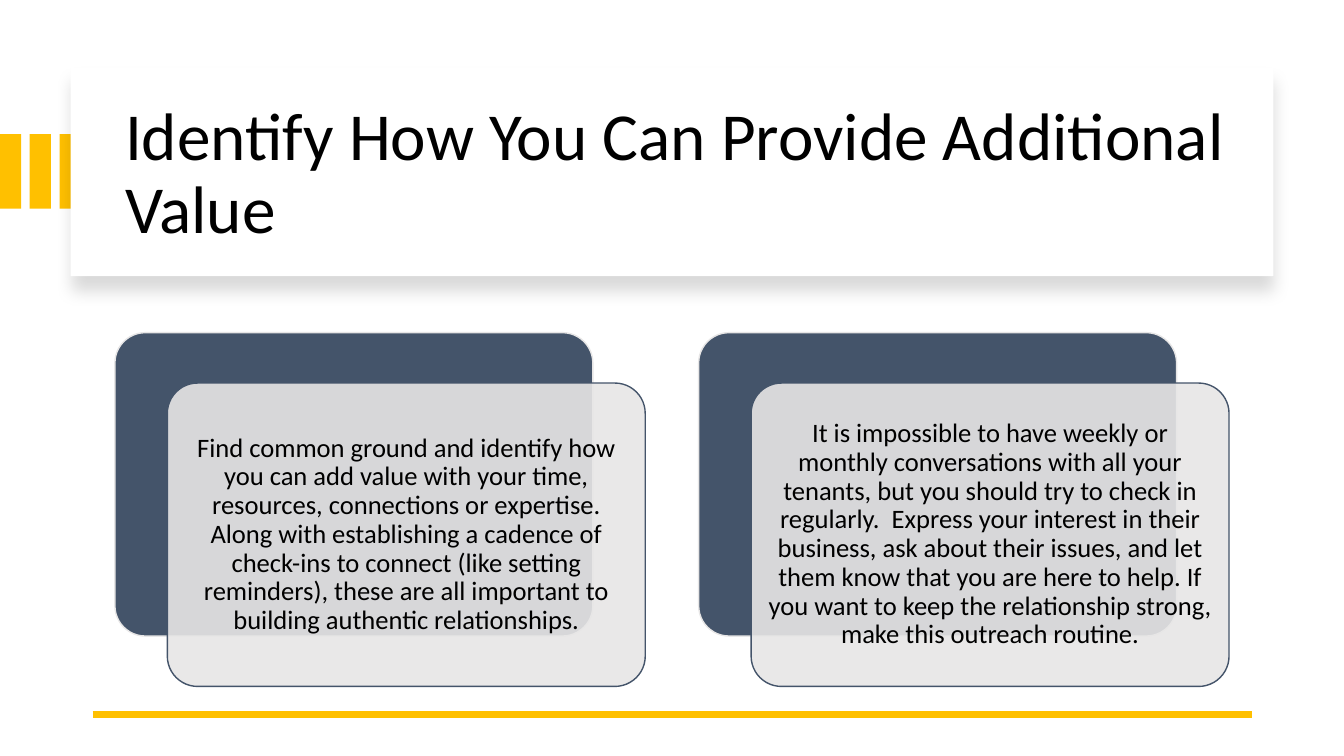
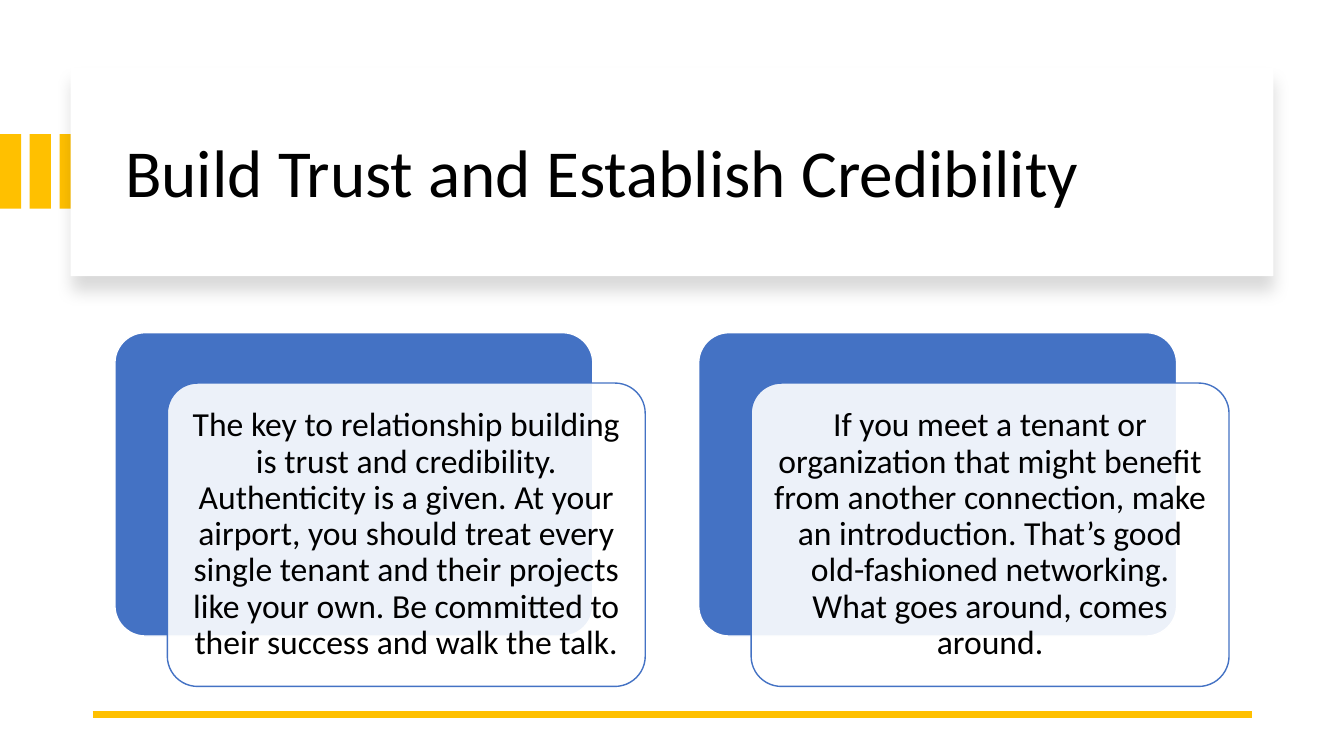
"""Build two slides on tenant relationships, each with a title banner and two layered cards."""
from dataclasses import dataclass

from lxml.etree import SubElement
from pptx import Presentation
from pptx.dml.color import RGBColor
from pptx.enum.shapes import MSO_CONNECTOR as Connector, MSO_SHAPE as Shape
from pptx.enum.text import MSO_ANCHOR as Anchor, MSO_AUTO_SIZE as AutoSize, PP_ALIGN as Align
from pptx.oxml.ns import qn
from pptx.util import Inches, Pt

GOLD, WHITE, BLACK = "FFC000", "FFFFFF", "000000"
FONT = "Calibri"
TITLE_ONLY = 5
STRIPE_PITCH = 0.59 / 2
CARD_LEFT, CARD_TOP, CARD_PITCH = 1.14, 3.3, 5.79
CARD_W, CARD_H = 4.74, 3.01
FRONT_DX, FRONT_DY = 0.52, 0.5


@dataclass(frozen=True)
class Box:
    """A rectangle in inches."""
    left: float
    top: float
    width: float
    height: float

    def emu(self) -> list:
        """Return the rectangle as lengths."""
        return [Inches(v) for v in (self.left, self.top, self.width, self.height)]


@dataclass(frozen=True)
class Page:
    """The content and card style of one slide."""
    title: str
    cards: tuple
    dark: str
    light: str
    size: int
    inset: float


TITLE_BOX = Box(1.14, 0.89, 11.13, 1.7)
BANNER_BOX = Box(0.7, 0.67, 11.93, 2.07)

PAGES = (
    Page(
        "Identify How You Can Provide Additional Value",
        (
            "Find common ground and identify how you can add value with your time, "
            "resources, connections or expertise. Along with establishing a cadence of "
            "check-ins to connect (like setting reminders), these are all important to "
            "building authentic relationships.",
            "It is impossible to have weekly or monthly conversations with all your "
            "tenants, but you should try to check in regularly.  Express your interest in "
            "their business, ask about their issues, and let them know that you are here "
            "to help. If you want to keep the relationship strong, make this outreach "
            "routine.",
        ),
        dark="44546A", light="E7E6E6", size=19, inset=0.08,
    ),
    Page(
        "Build Trust and Establish Credibility",
        (
            "The key to relationship building is trust and credibility. Authenticity is a "
            "given. At your airport, you should treat every single tenant and their "
            "projects like your own. Be committed to their success and walk the talk.",
            "If you meet a tenant or organization that might benefit from another "
            "connection, make an introduction. That’s good old-fashioned networking. "
            "What goes around, comes around.",
        ),
        dark="4472C4", light=WHITE, size=24, inset=0.1,
    ),
)


def rgb(color: str) -> RGBColor:
    """Turn a hex string into a colour."""
    return RGBColor.from_string(color)


def apply(target, values: dict) -> None:
    """Set each named attribute on the target."""
    for name, value in values.items():
        setattr(target, name, value)


def add_box(s, kind, box: Box, fill: str, line: str | None = None):
    """Add a flat filled shape with an optional 1 pt outline."""
    sp = s.shapes.add_shape(kind, *box.emu())
    sp.shadow.inherit = False
    sp.fill.solid()
    sp.fill.fore_color.rgb = rgb(fill)
    if line:
        sp.line.color.rgb = rgb(line)
        sp.line.width = Pt(1)
    else:
        sp.line.fill.background()
    return sp


def set_alpha(color_element, percent: int) -> None:
    """Give a colour element an opacity."""
    SubElement(color_element, qn("a:alpha"), val=str(percent * 1000))


def add_shadow(sp) -> None:
    """Cast a soft shadow straight down."""
    effects = sp.element.spPr.find(qn("a:effectLst"))
    shadow = SubElement(effects, qn("a:outerShdw"), blurRad=str(Pt(11)), dist=str(Pt(10)),
                        dir="5400000", algn="t", rotWithShape="0")
    set_alpha(SubElement(shadow, qn("a:srgbClr"), val=BLACK), 15)


def write(sp, text: str, size: int, align: Align, frame: dict) -> None:
    """Put one formatted paragraph into a shape."""
    tf = sp.text_frame
    apply(tf, {"word_wrap": True, "auto_size": AutoSize.NONE,
               "vertical_anchor": Anchor.MIDDLE, **frame})
    p = tf.paragraphs[0]
    apply(p, {"alignment": align, "line_spacing": 0.9})
    r = p.add_run()
    r.text = text
    apply(r.font, {"name": FONT, "size": Pt(size)})
    r.font.color.rgb = rgb(BLACK)


def add_header(s, title: str) -> None:
    """Draw the stripes, the banner and the title on top of it."""
    for i in range(3):
        add_box(s, Shape.RECTANGLE, Box(i * STRIPE_PITCH, 1.33, 0.21, 0.74), GOLD)
    add_shadow(add_box(s, Shape.RECTANGLE, BANNER_BOX, WHITE))
    sp = s.shapes.title
    apply(sp, dict(zip(("left", "top", "width", "height"), TITLE_BOX.emu())))
    write(sp, title, 48, Align.LEFT, {})
    sp.element.getparent().append(sp.element)


def add_rule(s) -> None:
    """Draw the gold line at the foot of the slide."""
    y = Inches(7.09)
    line = s.shapes.add_connector(Connector.STRAIGHT, Inches(0.92), y, Inches(12.42), y)
    line.line.color.rgb = rgb(GOLD)
    line.line.width = Pt(4.5)
    SubElement(line.element.spPr, qn("a:effectLst"))


def add_card(s, page: Page, index: int) -> None:
    """Draw a dark card with a translucent text card offset over it."""
    left = CARD_LEFT + index * CARD_PITCH
    back = add_box(s, Shape.ROUNDED_RECTANGLE, Box(left, CARD_TOP, CARD_W, CARD_H),
                   page.dark, page.light)
    front = add_box(s, Shape.ROUNDED_RECTANGLE,
                    Box(left + FRONT_DX, CARD_TOP + FRONT_DY, CARD_W, CARD_H),
                    page.light, page.dark)
    for sp in (back, front):
        sp.adjustments[0] = 0.1
    set_alpha(front.element.spPr.find(f"{qn('a:solidFill')}/{qn('a:srgbClr')}"), 90)
    margins = {f"margin_{side}": Inches(page.inset) for side in ("left", "top", "right", "bottom")}
    write(front, page.cards[index], page.size, Align.CENTER, margins)


def main() -> None:
    """Build and save the presentation."""
    prs = Presentation()
    apply(prs, {"slide_width": Inches(13.33), "slide_height": Inches(7.5)})
    for page in PAGES:
        s = prs.slides.add_slide(prs.slide_layouts[TITLE_ONLY])
        add_header(s, page.title)
        add_rule(s)
        for index in range(len(page.cards)):
            add_card(s, page, index)
    prs.save("out.pptx")


if __name__ == "__main__":
    main()
